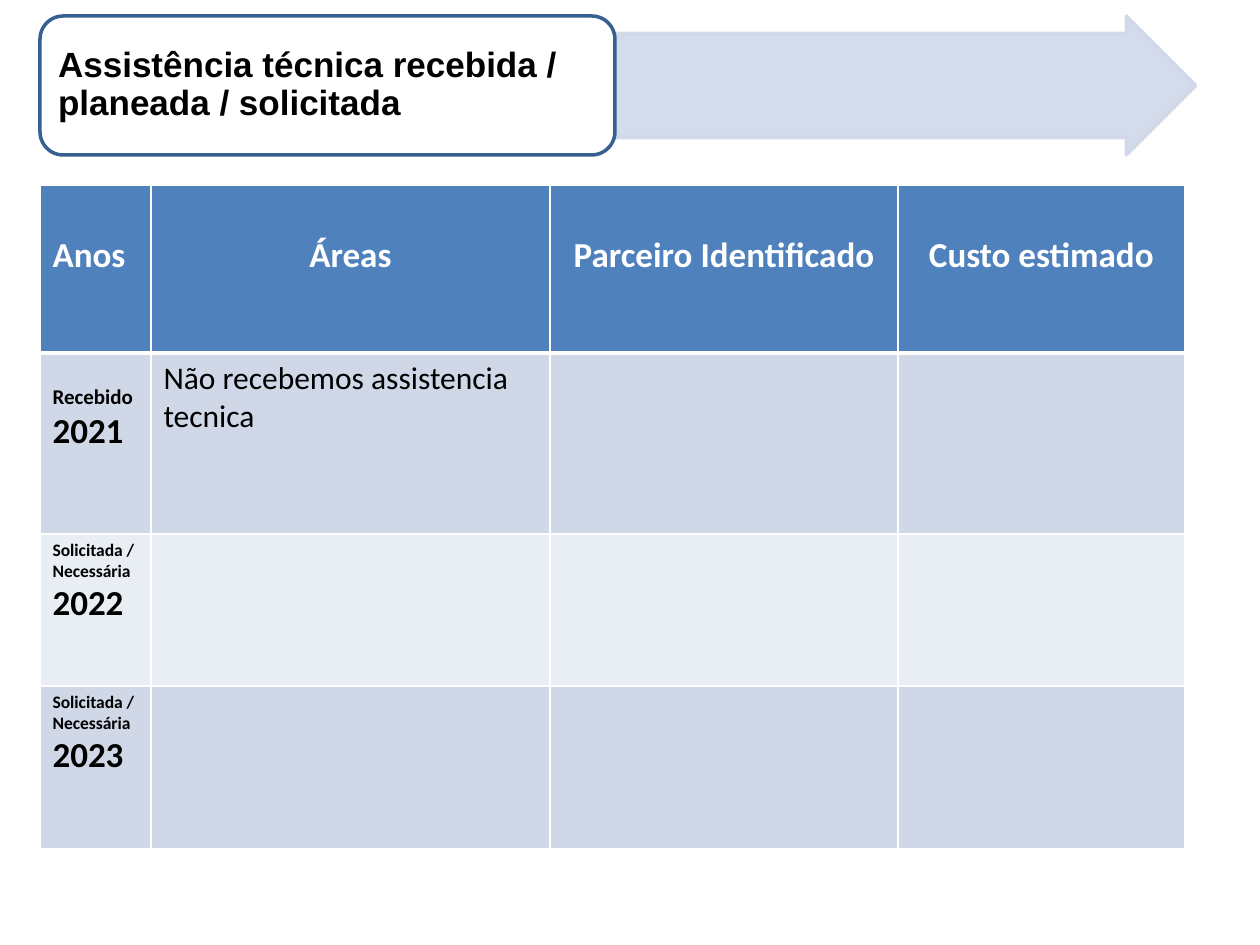
from lxml import etree
from pptx import Presentation
from pptx import util as u
from pptx.dml.color import RGBColor
from pptx.enum import shapes, text
from pptx.oxml import ns

PX = u.Inches(1) / 126


def px(*lengths):
    return [u.Emu(round(n * PX)) for n in lengths]


def paint(color_format, hex_color, alpha=None):
    color_format.solid()
    color_format.fore_color.rgb = RGBColor.from_string(hex_color)
    if alpha:
        clr = color_format._xPr.find(".//" + ns.qn("a:srgbClr"))
        etree.SubElement(clr, ns.qn("a:alpha"), val=str(alpha * 1000))


prs = Presentation()
prs.slide_width, prs.slide_height = px(1260, 945)
s = prs.slides.add_slide(prs.slide_layouts[5])

kinds = shapes.MSO_SHAPE
for kind, box, fill, line, alpha in [
    (kinds.RIGHT_ARROW, (616, 16, 580, 139), "D0D8E8", "D0D8E8", 90),
    (kinds.ROUNDED_RECTANGLE, (40, 16, 575, 139), "FFFFFF", "376092", None),
]:
    sp = s.shapes.add_shape(kind, *px(*box))
    sp.shadow.inherit = False
    paint(sp.fill, fill, alpha)
    paint(sp.line.fill, line, alpha)
    sp.line.width = u.Pt(2)
    if kind == kinds.RIGHT_ARROW:
        sp.adjustments[0] = 0.75

title = s.shapes.title
s.shapes._spTree.append(title._element)
title.left, title.top, title.width, title.height = px(48, 23, 561, 125)
tf = title.text_frame
tf.text = "Assistência técnica recebida / planeada / solicitada"
tf.auto_size = text.MSO_AUTO_SIZE.NONE
tf.word_wrap = True
tf.vertical_anchor = text.MSO_ANCHOR.MIDDLE
tf.margin_left, tf.margin_right, tf.margin_top, tf.margin_bottom = px(10, 10, 5, 5)
p = tf.paragraphs[0]
p.alignment = text.PP_ALIGN.LEFT
p.line_spacing = 0.9
p.font.name, p.font.size, p.font.bold = "Arial", u.Pt(20), True
p.font.color.rgb = RGBColor.from_string("000000")

col_widths = [111, 399, 348, 287]
row_heights = [168, 181, 152, 163]
row_fills = ["4F81BD", "D0D8E8", "E9EDF4", "D0D8E8"]
top_margins = [49, 32, 6, 6]
rows = [
    [[(name, 20, True)] for name in ("Anos", "Áreas", "Parceiro Identificado", "Custo estimado")],
    [[("Recebido", 12, True), ("2021", 20, True)],
     [("Não recebemos assistencia tecnica", 18, False)], [], []],
    [[("Solicitada / Necessária", 10, True), ("2022", 20, True)], [], [], []],
    [[("Solicitada / Necessária", 10, True), ("2023", 20, True)], [], [], []],
]

table = s.shapes.add_table(
    4, 4, *px(40, 185, sum(col_widths), sum(row_heights))).table
for column, width in zip(table.columns, px(*col_widths)):
    column.width = width
for row, height in zip(table.rows, px(*row_heights)):
    row.height = height

for i, row in enumerate(rows):
    for j, lines in enumerate(row):
        cell = table.cell(i, j)
        paint(cell.fill, row_fills[i])
        if i == 0 or j == 0:
            cell.margin_top = px(top_margins[i])[0]
        for k, (words, size, bold) in enumerate(lines):
            tf = cell.text_frame
            p = tf.add_paragraph() if k else tf.paragraphs[0]
            p.text = words
            p.alignment = text.PP_ALIGN.CENTER if i == 0 and j else text.PP_ALIGN.LEFT
            p.font.name, p.font.size, p.font.bold = "Calibri", u.Pt(size), bold
            p.font.color.rgb = RGBColor.from_string("000000" if i else "FFFFFF")
        tcPr = cell._tc.get_or_add_tcPr()
        for n, side in enumerate("LRTB"):
            thick = (i, side) in [(0, "B"), (1, "T")]
            ln = etree.Element(ns.qn("a:ln" + side), w=str(u.Pt(3 if thick else 1)))
            solid = etree.SubElement(ln, ns.qn("a:solidFill"))
            etree.SubElement(solid, ns.qn("a:srgbClr"), val="FFFFFF")
            tcPr.insert(n, ln)

prs.save("out.pptx")
